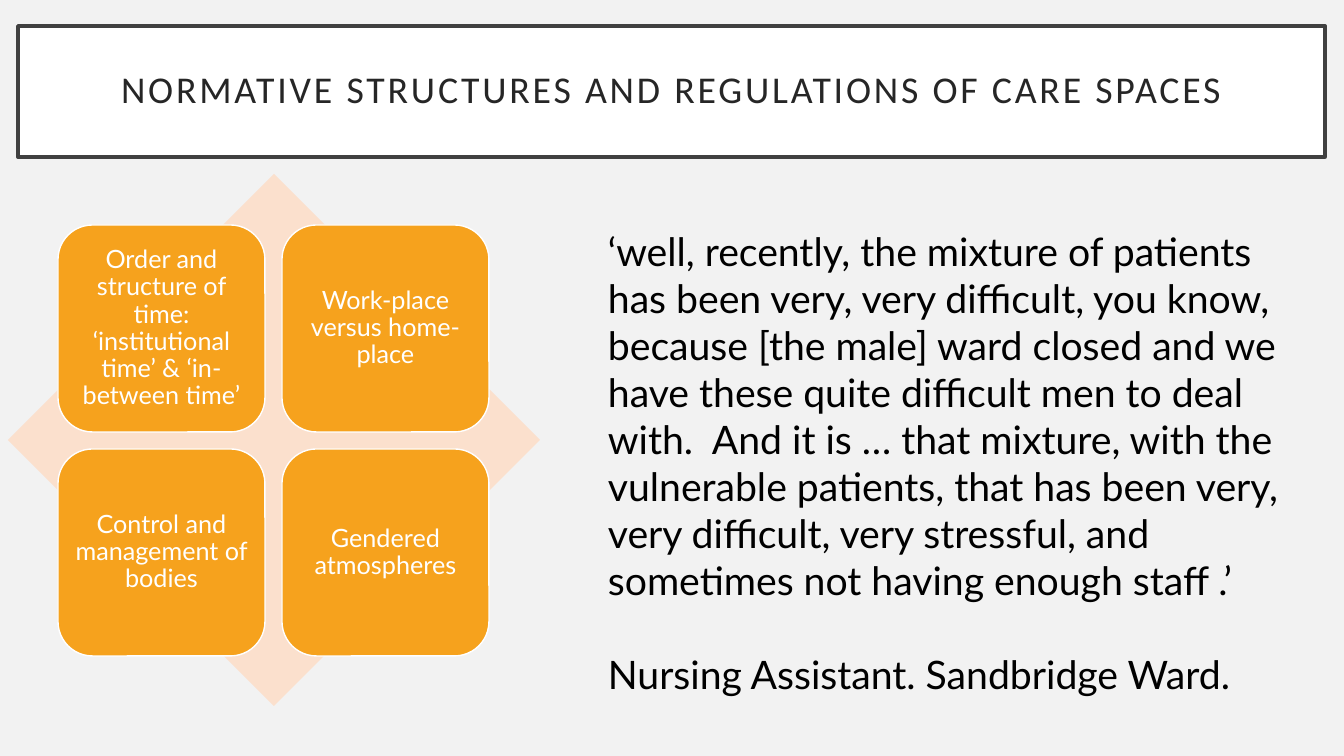
from pptx import Presentation
from pptx import util as u
from pptx.dml.color import RGBColor
from pptx.enum import shapes, text

COLOURS = {
    "background": "F2F2F2",
    "white": "FFFFFF",
    "frame": "404040",
    "heading": "262626",
    "diamond": "FBE0CD",
    "tile": "F6A21D",
    "quote": "000000",
}
THEMES = [
    "Order and structure of time: ‘institutional time’ & ‘in-between time’",
    "Work-place versus home-place",
    "Control and management of bodies",
    "Gendered atmospheres",
]
QUOTE = (
    "‘well, recently, the mixture of patients has been very, very difficult, "
    "you know, because [the male] ward closed and we have these quite difficult "
    "men to deal with.  And it is … that mixture, with the vulnerable patients, "
    "that has been very, very difficult, very stressful, and sometimes not "
    "having enough staff .’"
)
SPEAKER = "Nursing Assistant. Sandbridge Ward."


class SlideBuilder:
    scale = 12192000 / 1344
    body_font = "Lato"
    title_font = "Calibri"

    def __init__(self, deck):
        deck.slide_width, deck.slide_height = self.px(1344), self.px(756)
        self.slide = deck.slides.add_slide(deck.slide_layouts[5])
        self.fill(self.slide.background, "background")

    def px(self, length):
        return u.Emu(round(length * self.scale))

    def colour(self, name):
        return RGBColor.from_string(COLOURS[name])

    def fill(self, target, name):
        target.fill.solid()
        target.fill.fore_color.rgb = self.colour(name)

    def outline(self, shape, name, width):
        shape.line.color.rgb = self.colour(name)
        shape.line.width = u.Pt(width)

    def frame(self, shape, inset):
        frame = shape.text_frame
        frame.word_wrap = True
        frame.auto_size = text.MSO_AUTO_SIZE.NONE
        frame.vertical_anchor = text.MSO_ANCHOR.MIDDLE
        frame.margin_left = frame.margin_right = self.px(inset)
        frame.margin_top = frame.margin_bottom = self.px(inset)
        return frame

    def paragraph(self, para, words, font, size, colour, centred=False):
        para.text = words
        para.alignment = text.PP_ALIGN.CENTER if centred else text.PP_ALIGN.LEFT
        para.line_spacing = 0.9 if centred else 1.0
        span = para.runs[0]
        span.font.name = font
        span.font.size = u.Pt(size)
        span.font.color.rgb = self.colour(colour)
        return span

    def title(self, words, left, top, width, height):
        box = self.slide.shapes.title
        box.left, box.top = self.px(left), self.px(top)
        box.width, box.height = self.px(width), self.px(height)
        self.fill(box, "white")
        self.outline(box, "frame", 2.5)
        para = self.frame(box, 20).paragraphs[0]
        span = self.paragraph(para, words, self.title_font, 27, "heading", True)
        span.font._element.set("spc", "200")

    def shape(self, kind, colour, left, top, size):
        shape = self.slide.shapes.add_shape(
            kind, self.px(left), self.px(top), self.px(size), self.px(size))
        shape.shadow.inherit = False
        self.fill(shape, colour)
        shape.line.fill.background()
        return shape

    def tile(self, words, left, top, size):
        tile = self.shape(shapes.MSO_SHAPE.ROUNDED_RECTANGLE, "tile", left, top, size)
        self.outline(tile, "white", 1)
        para = self.frame(tile, 7).paragraphs[0]
        self.paragraph(para, words, self.body_font, 18, "white", True)

    def quote(self, words, speaker, left, top, width, height):
        box = self.slide.shapes.add_textbox(
            self.px(left), self.px(top), self.px(width), self.px(height))
        frame = box.text_frame
        frame.word_wrap = True
        self.paragraph(frame.paragraphs[0], words, self.body_font, 28, "quote")
        para = frame.add_paragraph()
        self.paragraph(para, speaker, self.body_font, 28, "quote")
        para.space_before = u.Pt(33.6)


def main():
    deck = Presentation()
    page = SlideBuilder(deck)
    page.title("NORMATIVE STRUCTURES AND REGULATIONS OF CARE SPACES", 18, 26, 1307, 131)
    page.shape(shapes.MSO_SHAPE.DIAMOND, "diamond", 8, 174, 532)
    for index, theme in enumerate(THEMES):
        row, column = divmod(index, 2)
        page.tile(theme, 58 + column * 224, 225 + row * 224, 207)
    page.quote(QUOTE, SPEAKER, 598, 222, 727, 485)
    deck.save("out.pptx")


if __name__ == "__main__":
    main()
